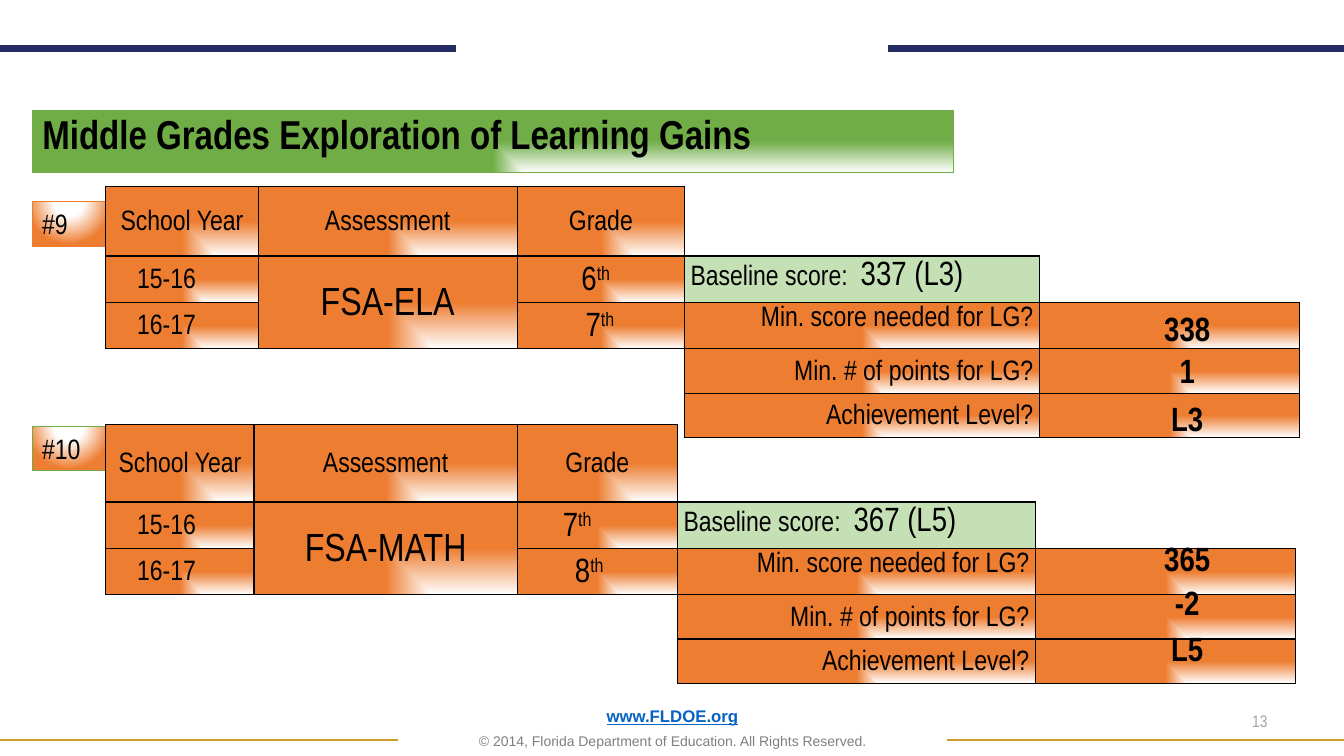
"""Build the slide on middle grades learning gains."""
from lxml import etree
from pptx import Presentation
from pptx.dml.color import RGBColor
from pptx.enum.shapes import MSO_CONNECTOR as Connector, MSO_SHAPE as Shape
from pptx.enum.text import MSO_ANCHOR as Anchor, MSO_AUTO_SIZE as AutoSize, PP_ALIGN as Align
from pptx.oxml import parse_xml
from pptx.oxml.ns import nsdecls, qn
from pptx.util import Inches, Pt

BLACK = RGBColor(0x00, 0x00, 0x00)
ORANGE = RGBColor(0xED, 0x7D, 0x31)
GREEN = RGBColor(0x70, 0xAD, 0x47)
PALE_GREEN = RGBColor(0xC5, 0xE0, 0xB4)
NAVY = RGBColor(0x26, 0x2A, 0x63)
GOLD = RGBColor(0xCD, 0x9D, 0x2C)
LINK_BLUE = RGBColor(0x05, 0x63, 0xC1)
GRAY = RGBColor(0x80, 0x80, 0x80)
LIGHT_GRAY = RGBColor(0xA6, 0xA6, 0xA6)
NARROW = "Arial Narrow"
NO_GRID_STYLE = "{2D5ABB26-0587-4C30-8999-92F81FD0307C}"
CORNER = ("rect", 0, 'l="100000" t="100000"')
SPOTLIGHT = ("circle", 35, 'l="50000" t="-80000" r="50000" b="180000"')


def fade(fill, properties, color, glow):
    """Fill with a gradient from a white glow to the color."""
    kind, white_until, focus = glow
    fill.solid()
    solid = properties.find(qn("a:solidFill"))
    stops = "".join(
        f'<a:gs pos="{share * 1000}"><a:srgbClr val="{tone}"/></a:gs>'
        for share, tone in ((0, "FFFFFF"), (white_until, "FFFFFF"), (100, color)))
    properties.replace(solid, parse_xml(
        f'<a:gradFill {nsdecls("a")} rotWithShape="1"><a:gsLst>{stops}</a:gsLst>'
        f'<a:path path="{kind}"><a:fillToRect {focus}/></a:path></a:gradFill>'))


def write(paragraph, text, size, color=BLACK, font=NARROW, bold=False, align=Align.LEFT, spacing=1.0):
    """Put formatted text into a paragraph."""
    paragraph.alignment = align
    paragraph.line_spacing = spacing
    paragraph.font.name = font
    paragraph.font.size = Pt(size)
    paragraph.font.bold = bold
    paragraph.font.color.rgb = color
    return_run = paragraph.add_run()
    return_run.text = text
    return return_run


deck = Presentation()
deck.slide_width, deck.slide_height = Inches(13.33), Inches(7.5)
slide = deck.slides.add_slide(deck.slide_layouts[5])
shapes = slide.shapes

for start, end, height, color, weight in (
        (0, 3.95, 7.34, GOLD, 1), (9.39, 13.33, 7.34, GOLD, 1),
        (0, 4.52, 0.48, NAVY, 5), (8.81, 13.33, 0.48, NAVY, 5)):
    rule = shapes.add_connector(
        Connector.STRAIGHT, Inches(start), Inches(height), Inches(end), Inches(height))
    rule.line.color.rgb = color
    rule.line.width = Pt(weight)
    etree.SubElement(rule._element.spPr, qn("a:effectLst"))

heading = shapes.title
heading.left, heading.top, heading.width, heading.height = map(Inches, (0.32, 1.09, 9.14, 0.62))
fade(heading.fill, heading._element.spPr, GREEN, CORNER)
heading.line.color.rgb = GREEN
heading.line.width = Pt(0.5)
heading.text_frame.auto_size = AutoSize.NONE
heading.text_frame.vertical_anchor = Anchor.TOP
write(heading.text_frame.paragraphs[0], "Middle Grades Exploration of Learning Gains", 28.8,
      bold=True, spacing=0.9)

footer = shapes.add_textbox(Inches(0.92), Inches(7.06), Inches(11.5), Inches(0.43)).text_frame
footer.word_wrap = True
footer.vertical_anchor = Anchor.BOTTOM
website = footer.paragraphs[0]
write(website, "www.FLDOE.org", 12, LINK_BLUE, "Arial", True, Align.CENTER, 0.9)
website.font.underline = True
rights = footer.add_paragraph()
write(rights, "© 2014, Florida Department of Education. All Rights Reserved.", 10, GRAY, "Arial",
      align=Align.CENTER, spacing=0.9)
rights.space_before = Pt(6)

page = shapes.add_textbox(Inches(9.56), Inches(6.95), Inches(3.11), Inches(0.4)).text_frame
page.word_wrap = True
page.vertical_anchor = Anchor.MIDDLE
write(page.paragraphs[0], "13", 12, LIGHT_GRAY, align=Align.RIGHT)

cases = (
    ("#9", 2.0, ORANGE, 1.85, 0.69, (1.51, 2.57, 1.66, 3.52, 2.58), "FSA-ELA",
     (("6", 0.16), ("7", 0.08)), "337 (L3)", (("338", 3.01), ("1", 3.42), ("L3", 3.9))),
    ("#10", 4.23, GREEN, 4.21, 0.77, (1.47, 2.61, 1.59, 3.55, 2.58), "FSA-MATH",
     (("7", 0.46), ("8", 0.22)), "367 (L5)", (("365", 5.29), ("-2", 5.72), ("L5", 6.18))),
)
for number, tag_top, tag_edge, top, header_height, widths, exam, grades, baseline, answers in cases:
    tag = shapes.add_shape(Shape.RECTANGLE, Inches(0.32), Inches(tag_top), Inches(0.73), Inches(0.44))
    tag.shadow.inherit = False
    fade(tag.fill, tag._element.spPr, ORANGE, SPOTLIGHT)
    tag.line.color.rgb = tag_edge
    tag.line.width = Pt(0.5)
    write(tag.text_frame.paragraphs[0], number, 20)

    heights = (header_height, 0.46, 0.46, 0.44, 0.44)
    grid = shapes.add_table(5, 5, Inches(1.05), Inches(top), Inches(sum(widths)),
                            Inches(sum(heights))).table
    grid.first_row = grid.horz_banding = False
    grid._tbl.tblPr.find(qn("a:tableStyleId")).text = NO_GRID_STYLE
    for column, width in zip(grid.columns, widths):
        column.width = Inches(width)
    for row, height in zip(grid.rows, heights):
        row.height = Inches(height)
    grid.cell(1, 1).merge(grid.cell(2, 1))
    for row in (3, 4):
        grid.cell(row, 0).merge(grid.cell(row, 2))

    labels = {
        (0, 0): ("School Year", 20, Align.CENTER), (0, 1): ("Assessment", 20, Align.CENTER),
        (0, 2): ("Grade", 20, Align.CENTER), (1, 0): ("15-16", 20, Align.LEFT),
        (2, 0): ("16-17", 20, Align.LEFT), (1, 1): (exam, 28, Align.CENTER),
        (1, 2): (grades[0][0], 24, Align.CENTER), (2, 2): (grades[1][0], 24, Align.CENTER),
        (1, 3): ("Baseline score:  ", 20, Align.LEFT),
        (2, 3): ("Min. score needed for LG?", 20, Align.RIGHT),
        (3, 3): ("Min. # of points for LG?", 20, Align.RIGHT),
        (4, 3): ("Achievement Level?", 20, Align.RIGHT),
    }
    for row in range(5):
        for column in range(5):
            cell = grid.cell(row, column)
            cell.margin_left = cell.margin_right = Inches(0.06)
            cell.margin_top = cell.margin_bottom = 0
            used = (row < 3 and column < 3) or (column == 3 and row > 0) or (column == 4 and row > 1)
            if not used:
                cell.fill.background()
                continue
            cell.vertical_anchor = Anchor.TOP if column == 3 and row < 3 else Anchor.MIDDLE
            properties = cell._tc.get_or_add_tcPr()
            if (row, column) == (1, 3):
                cell.fill.solid()
                cell.fill.fore_color.rgb = PALE_GREEN
            else:
                fade(cell.fill, properties, ORANGE, CORNER)
            for position, side in enumerate("LRTB"):
                properties.insert(position, parse_xml(
                    f'<a:ln{side} {nsdecls("a")} w="12700"><a:solidFill>'
                    f'<a:srgbClr val="{BLACK}"/></a:solidFill></a:ln{side}>'))
            if (row, column) in labels:
                text, size, align = labels[row, column]
                write(cell.text_frame.paragraphs[0], text, size, align=align, spacing=1.15)

    for row, (grade, right_margin) in enumerate(grades, 1):
        grid.cell(row, 0).margin_left = Inches(0.31)
        grade_cell = grid.cell(row, 2)
        grade_cell.margin_right = Inches(right_margin)
        suffix = grade_cell.text_frame.paragraphs[0].add_run()
        suffix.text = "th"
        suffix.font._element.set("baseline", "30000")
    score = grid.cell(1, 3).text_frame.paragraphs[0].add_run()
    score.text = baseline
    score.font.size = Pt(24)

    for answer, answer_top in answers:
        box = shapes.add_textbox(Inches(11.21), Inches(answer_top), Inches(1.13), Inches(0.5))
        box.text_frame.word_wrap = True
        write(box.text_frame.paragraphs[0], answer, 24, bold=True, align=Align.CENTER)

deck.save("out.pptx")
